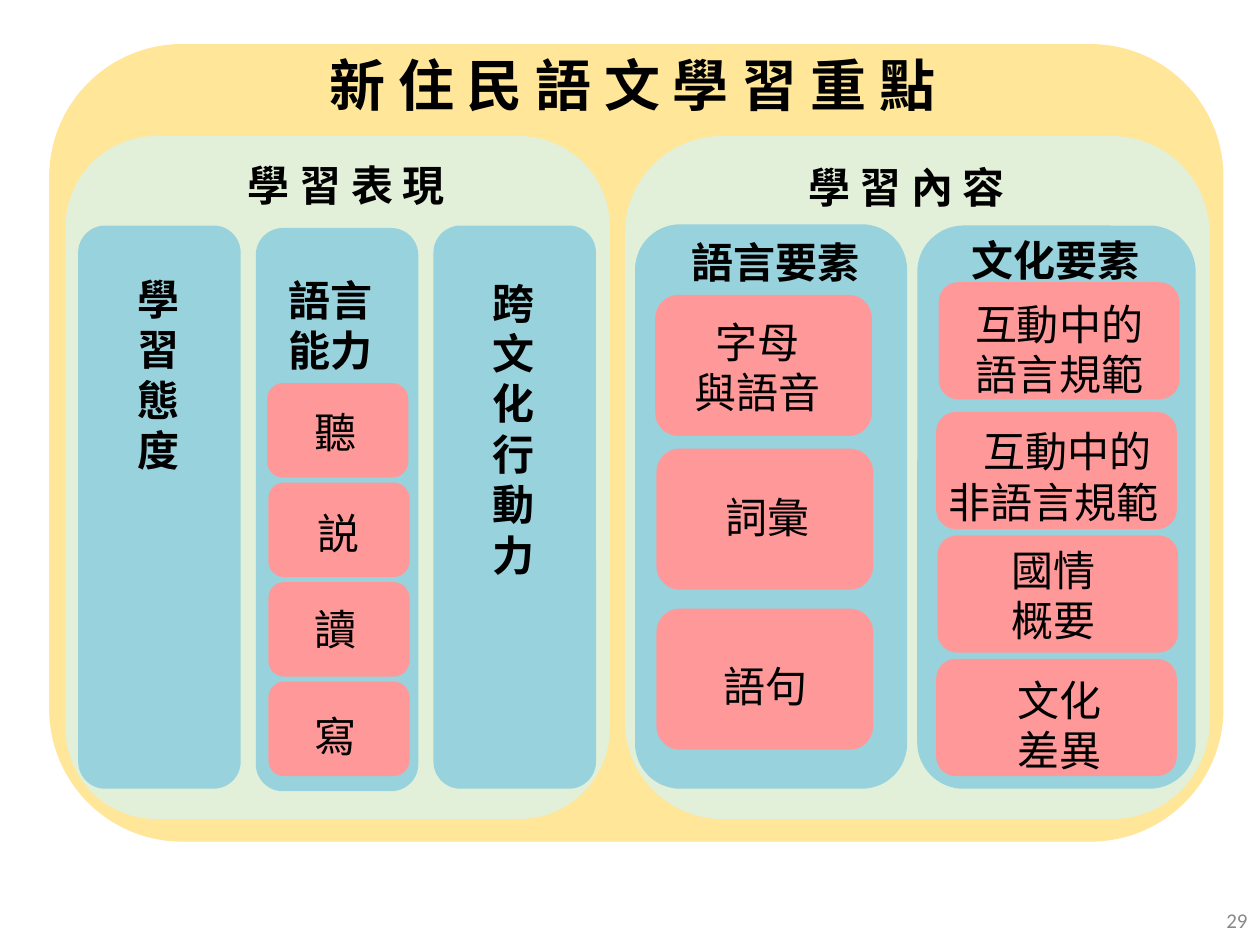
from dataclasses import dataclass
from itertools import cycle
from lxml.etree import SubElement
from pptx import Presentation
from pptx.dml.color import RGBColor
from pptx.enum.shapes import MSO_SHAPE
from pptx.enum.text import MSO_ANCHOR, MSO_AUTO_SIZE, PP_ALIGN
from pptx.oxml.ns import qn
from pptx.util import Inches, Pt


@dataclass(frozen=True)
class Theme:
    frame: str = "FFE699"
    panel: str = "E2F0D9"
    column: str = "98D2DC"
    card: str = "FF9999"
    ink: str = "000000"
    muted: str = "898989"
    font: str = "Noto Sans CJK TC"
    number_font: str = "Calibri"
    title: int = 32
    text: int = 24
    number: int = 12


THEME = Theme()
SLIDE_WIDTH, SLIDE_HEIGHT = Inches(10), Inches(7.5)
CELL = SLIDE_WIDTH / 100  # the slide is a grid of 100 columns by 75 rows
LINE_ROWS = 4.03          # rows taken by one line of 24 pt text
ALIGN = {"l": PP_ALIGN.LEFT, "c": PP_ALIGN.CENTER, "r": PP_ALIGN.RIGHT}


@dataclass(frozen=True)
class Box:
    """An area in grid columns and rows."""
    x: float
    y: float
    w: float
    h: float

    def inner(self, dx, dy, w, h):
        return Box(self.x + dx, self.y + dy, w, h)

    def lengths(self):
        return [round(cells * CELL) for cells in (self.x, self.y, self.w, self.h)]


def add_block(slide, box, color):
    block = slide.shapes.add_shape(MSO_SHAPE.ROUNDED_RECTANGLE, *box.lengths())
    block.shadow.inherit = False
    block.fill.solid()
    block.fill.fore_color.rgb = RGBColor.from_string(color)
    block.line.fill.background()
    return box


def write(frame, text, align="l", wrap=True, anchor=MSO_ANCHOR.TOP,
          color=THEME.ink, **font_format):
    """Write one paragraph per line; align holds one letter per line, repeated."""
    frame_format = {"word_wrap": wrap, "auto_size": MSO_AUTO_SIZE.NONE,
                    "vertical_anchor": anchor}
    for name, value in frame_format.items():
        setattr(frame, name, value)
    font_format = {"size": Pt(THEME.text), "bold": False, "name": THEME.font} | font_format
    for index, (line, side) in enumerate(zip(text.split("\n"), cycle(align))):
        paragraph = frame.add_paragraph() if index else frame.paragraphs[0]
        paragraph.alignment = ALIGN[side]
        run = paragraph.add_run()
        run.text = line
        run.font.color.rgb = RGBColor.from_string(color)
        for name, value in font_format.items():
            setattr(run.font, name, value)
        # East Asian glyphs take their own typeface element
        SubElement(run.font._element, qn("a:ea"), typeface=font_format["name"])


def add_label(slide, parent, dx, dy, width, text, **text_format):
    rows = 1 + LINE_ROWS * len(text.split("\n"))
    label = slide.shapes.add_textbox(*parent.inner(dx, dy, width, rows).lengths())
    write(label.text_frame, text, **text_format)


def add_cards(slide, column, width, height, cards):
    """Each card: its place in the column, then its label's place, width, text, alignment."""
    for x, y, dx, dy, label_width, text, align in cards:
        card = add_block(slide, column.inner(x, y, width, height), THEME.card)
        add_label(slide, card, dx, dy, label_width, text, align=align)


def build_frame(slide, box):
    add_block(slide, box, THEME.frame)
    title = slide.shapes.title
    title.left, title.top, title.width, title.height = box.inner(20.6, 0, 51.4, 6.4).lengths()
    write(title.text_frame, "新 住 民 語 文 學 習 重 點", align="c", wrap=False,
          size=Pt(THEME.title), bold=True)
    slide.shapes._spTree.append(title._element)  # bring the title above its frame


def build_performance(slide, box):
    add_block(slide, box, THEME.panel)
    add_label(slide, box, 13.5, 1.4, 18, "學 習 表 現", wrap=False, bold=True)
    attitude, ability, action = [
        add_block(slide, box.inner(1 + 14.1 * index, top, 12.9, 44.7), THEME.column)
        for index, top in enumerate((7.1, 7.3, 7.1))]
    add_label(slide, attitude, 3.7, 3.3, 8.7, "學\n習\n態\n度", bold=True)
    add_label(slide, ability, 1.6, 3.2, 9.9, "語言\n能力", bold=True)
    add_label(slide, action, 3.7, 3.6, 5.4, "跨\n文\n化\n行\n動\n力", bold=True)
    # Four skills at an even pitch
    skills = ((0.9, 2.8, 1.4, "聽"), (1, 2.9, 1.5, "説"),
              (1, 2.7, 1.2, "讀"), (1, 2.7, 1.8, "寫"))
    add_cards(slide, ability, 11.2, 7.5,
              [(x, 12.3 + 7.9 * index, dx, dy, 5.4, text, "l")
               for index, (x, dx, dy, text) in enumerate(skills)])


def build_content(slide, box):
    add_block(slide, box, THEME.panel)
    add_label(slide, box, 11.2, 1.5, 22.3, "學 習 內 容", align="c", bold=True)
    # Language elements
    language = add_block(slide, box.inner(0.8, 7, 21.6, 44.8), THEME.column)
    add_label(slide, language, 3.5, 0.5, 16.7, "語言要素", bold=True)
    add_cards(slide, language, 17.2, 11.2, (
        (1.6, 5.6, 2.1, 1.2, 12.1, "字母\n與語音", "c"),
        (1.7, 17.8, 4.5, 2.9, 8.8, "詞彙", "l"),
        (1.7, 30.5, 4.3, 3.6, 8.8, "語句", "l")))
    # Cultural elements
    culture = add_block(slide, box.inner(23.2, 7.1, 22.1, 44.7), THEME.column)
    add_cards(slide, culture, 19.1, 9.3, (
        (1.7, 4.5, 1.9, 0.8, 17.4, "互動中的\n語言規範", "l"),
        (1.5, 14.8, 0, 0.6, 20.8, "互動中的\n非語言規範", "cl"),
        (1.6, 24.6, 3.2, 0.2, 12, "國情\n概要", "c"),
        (1.5, 34.4, 2.5, 0.7, 14.6, "文化\n差異", "c")))
    add_label(slide, culture, 2.1, 0.2, 17.8, "文化要素", align="c", bold=True)


def build_page_number(slide, box):
    number = slide.shapes.add_textbox(*box.lengths())
    write(number.text_frame, "29", align="r", anchor=MSO_ANCHOR.MIDDLE,
          color=THEME.muted, size=Pt(THEME.number), name=THEME.number_font)


def main():
    presentation = Presentation()
    presentation.slide_width, presentation.slide_height = SLIDE_WIDTH, SLIDE_HEIGHT
    slide = presentation.slides.add_slide(presentation.slide_layouts[5])
    build_frame(slide, Box(3.9, 3.5, 93.2, 63.3))
    build_performance(slide, Box(5.2, 10.8, 43.2, 54.2))
    build_content(slide, Box(49.6, 10.8, 46.4, 54.2))
    build_page_number(slide, Box(77.5, 71, 22.5, 4))
    presentation.save("out.pptx")


if __name__ == "__main__":
    main()
